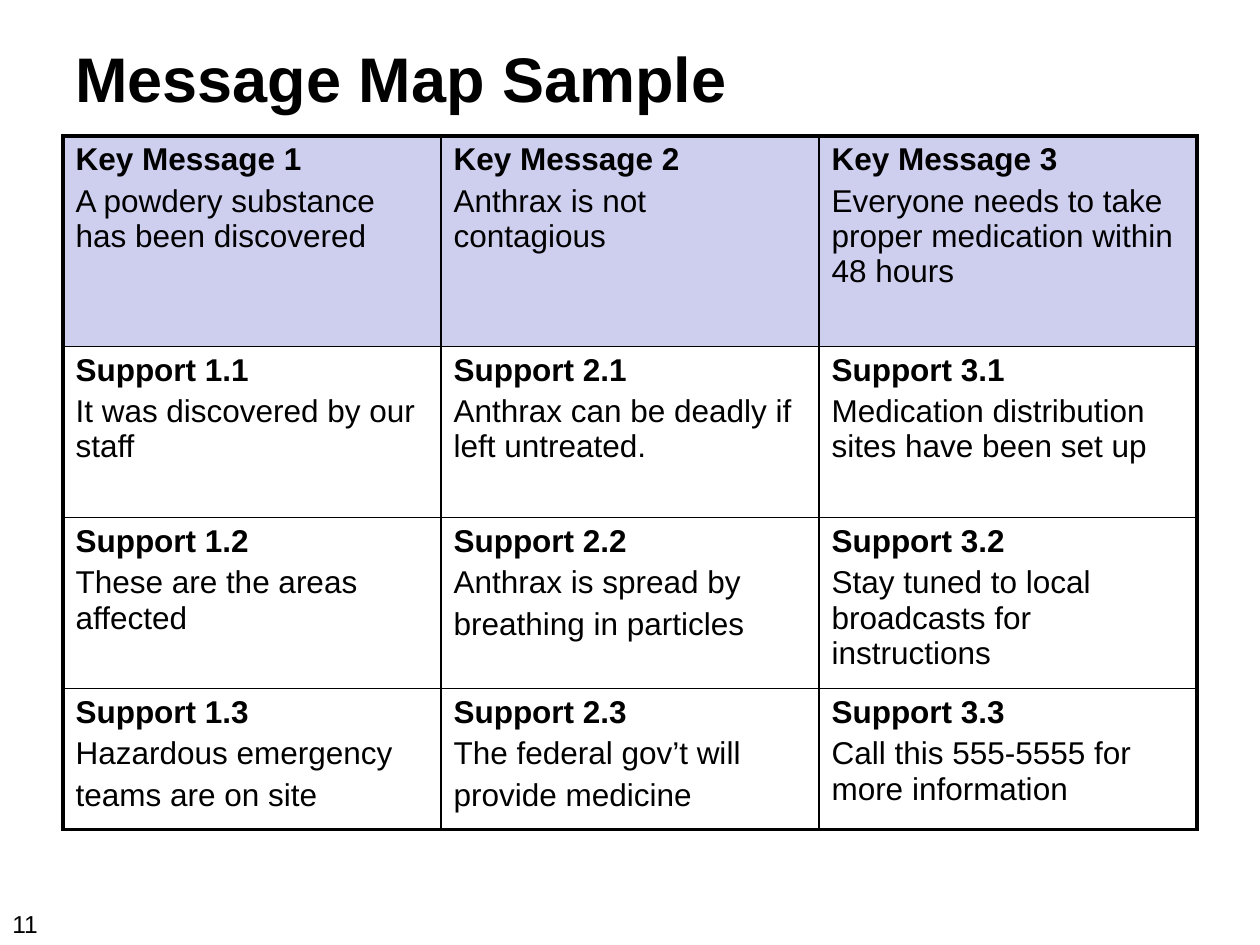
from dataclasses import dataclass

from lxml.etree import SubElement
from pptx import Presentation
from pptx.dml.color import RGBColor
from pptx.enum.text import MSO_ANCHOR
from pptx.oxml.ns import qn
from pptx.util import Cm, Pt

BLACK = RGBColor(0x00, 0x00, 0x00)
LAVENDER = RGBColor(0xCE, 0xCE, 0xEF)
FONT_NAME = "Arial"
OUTER_LINE, INNER_LINE = Pt(2.25), Pt(1)
COLUMN_WIDTH = 7.62
ROW_HEIGHTS = (4.24, 3.45, 3.45, 2.84)


@dataclass(frozen=True)
class Message:
    heading: str
    lines: tuple[str, ...]


@dataclass(frozen=True)
class Label:
    text: str
    left: float
    top: float
    width: float
    height: float
    size: float
    bold: bool
    anchor: MSO_ANCHOR


LABELS = (
    Label("11", 0, 18.21, 5.92, 0.64, 14, False, MSO_ANCHOR.TOP),
    Label("Message Map Sample", 1.27, 0.64, 20.52, 1.8, 36, True, MSO_ANCHOR.BOTTOM),
)

# One tuple per table row
MESSAGES = (
    (
        Message("Key Message 1", ("A powdery substance has been discovered",)),
        Message("Key Message 2", ("Anthrax is not contagious",)),
        Message("Key Message 3", ("Everyone needs to take proper medication within 48 hours",)),
    ),
    (
        Message("Support 1.1", ("It was discovered by our staff",)),
        Message("Support 2.1", ("Anthrax can be deadly if left untreated.",)),
        Message("Support 3.1", ("Medication distribution sites have been set up",)),
    ),
    (
        Message("Support 1.2", ("These are the areas affected",)),
        Message("Support 2.2", ("Anthrax is spread by", "breathing in particles")),
        Message("Support 3.2", ("Stay tuned to local broadcasts for instructions",)),
    ),
    (
        Message("Support 1.3", ("Hazardous emergency", "teams are on site")),
        Message("Support 2.3", ("The federal gov’t will", "provide medicine")),
        Message("Support 3.3", ("Call this 555-5555 for more information",)),
    ),
)


def write_paragraph(paragraph, text: str, size: float, bold: bool) -> None:
    run = paragraph.add_run()
    run.text = text
    for name, value in {"name": FONT_NAME, "size": Pt(size), "bold": bold}.items():
        setattr(run.font, name, value)
    run.font.color.rgb = BLACK


def add_label(slide, label: Label) -> None:
    position = (label.left, label.top, label.width, label.height)
    shape = slide.shapes.add_textbox(*(Cm(length) for length in position))
    frame = shape.text_frame
    frame.word_wrap = True
    frame.vertical_anchor = label.anchor
    write_paragraph(frame.paragraphs[0], label.text, label.size, label.bold)


def set_borders(cell, widths: dict[str, int]) -> None:
    properties = cell._tc.get_or_add_tcPr()
    for side, width in widths.items():
        line = SubElement(properties, qn(f"a:{side}"), w=str(width))
        fill = SubElement(line, qn("a:solidFill"))
        SubElement(fill, qn("a:srgbClr"), val=str(BLACK))


def fill_cell(cell, message: Message) -> None:
    frame = cell.text_frame
    write_paragraph(frame.paragraphs[0], message.heading, 18, True)
    for text in message.lines:
        paragraph = frame.add_paragraph()
        paragraph.space_before = Pt(3.6)
        write_paragraph(paragraph, text, 18, False)


def add_message_map(slide) -> None:
    row_count, column_count = len(MESSAGES), len(MESSAGES[0])
    table = slide.shapes.add_table(
        row_count, column_count, Cm(1.27), Cm(2.74),
        Cm(COLUMN_WIDTH * column_count), Cm(sum(ROW_HEIGHTS)),
    ).table
    table.first_row = table.horz_banding = False
    for column in table.columns:
        column.width = Cm(COLUMN_WIDTH)

    for row, messages in enumerate(MESSAGES):
        table.rows[row].height = Cm(ROW_HEIGHTS[row])
        for column, message in enumerate(messages):
            cell = table.cell(row, column)
            fill_cell(cell, message)
            # Heavy lines on the outer edge only
            on_edge = {
                "lnL": column == 0,
                "lnR": column == column_count - 1,
                "lnT": row == 0,
                "lnB": row == row_count - 1,
            }
            set_borders(cell, {
                side: OUTER_LINE if outer else INNER_LINE
                for side, outer in on_edge.items()
            })
            if row == 0:
                cell.fill.solid()
                cell.fill.fore_color.rgb = LAVENDER
            else:
                cell.fill.background()


def main() -> None:
    presentation = Presentation()
    presentation.slide_width, presentation.slide_height = Cm(25.4), Cm(19.05)
    slide = presentation.slides.add_slide(presentation.slide_layouts[6])

    # Page number and title
    for label in LABELS:
        add_label(slide, label)

    # Key messages with their supporting points
    add_message_map(slide)
    presentation.save("out.pptx")


if __name__ == "__main__":
    main()
